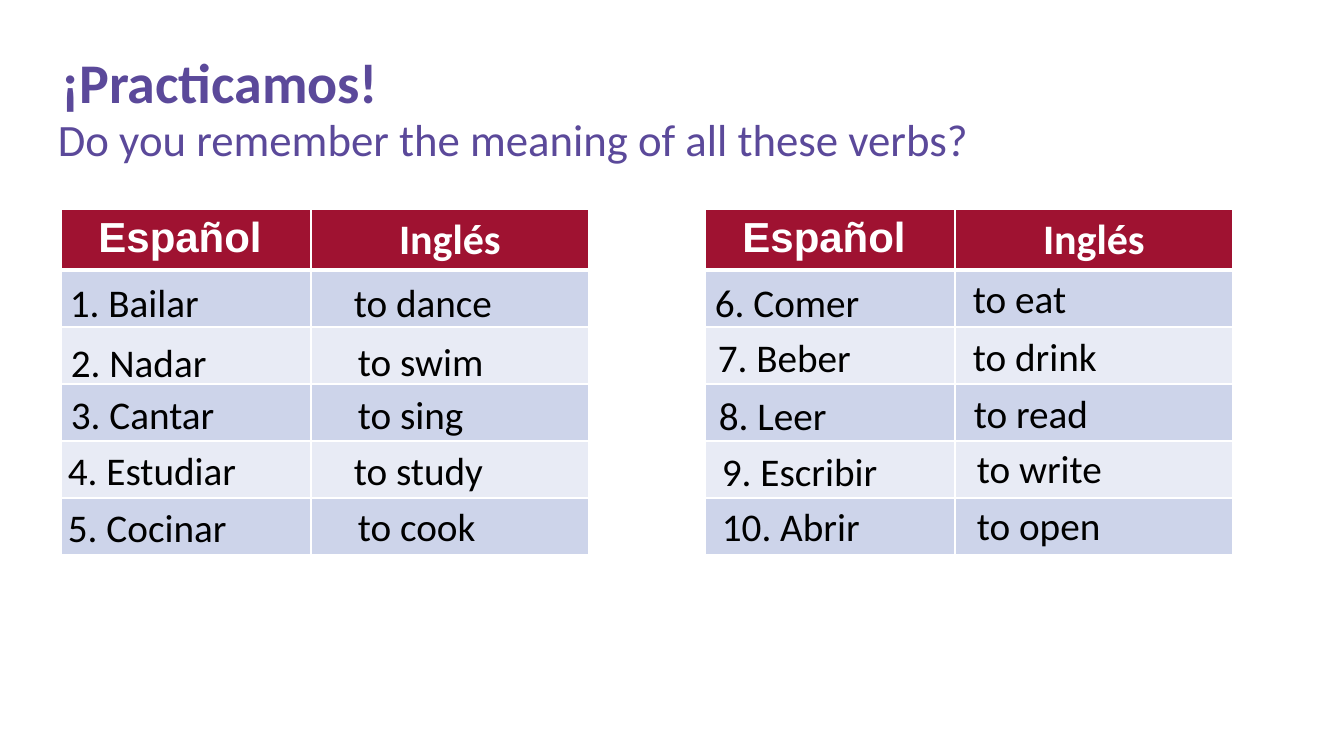
from dataclasses import dataclass
from lxml import etree
from pptx import Presentation
from pptx import util as u
from pptx.dml.color import RGBColor
from pptx.enum import text
from pptx.oxml import ns

PX_PER_INCH = 100.8


@dataclass(frozen=True)
class Theme:
    purple: str = "5B499A"
    red: str = "9F1231"
    white: str = "FFFFFF"
    black: str = "000000"
    bands: tuple = ("CDD4EA", "E8EBF5")
    font: str = "Calibri"
    spanish_header_font: str = "Arial"
    title_size: int = 40
    question_size: int = 32
    header_size: int = 30
    verb_size: int = 28


THEME = Theme()
COLUMN_WIDTHS = (250, 278)
HEADER_HEIGHT, ROW_HEIGHT = 61, 57
HEADERS = (("Español ", THEME.spanish_header_font), ("Inglés", THEME.font))

# Each entry: wording, horizontal and vertical nudge inside its cell, width.
FIRST_VERBS = (
    (("1. Bailar", -1, 3, 214), ("to dance", 33, 3, 334)),
    (("2. Nadar", 0, 6, 267), ("to swim", 37, 5, 267)),
    (("3. Cantar", 0, 1, 290), ("to sing", 37, 1, 267)),
    (("4. Estudiar", -3, 0, 274), ("to study", 33, 0, 274)),
    (("5. Cocinar", -3, 0, 267), ("to cook", 37, -1, 267)),
)
LAST_VERBS = (
    (("6. Comer", 0, 3, 267), ("to eat", 8, -1, 311)),
    (("7. Beber", 3, 1, 267), ("to drink", 8, 0, 267)),
    (("8. Leer", 4, 2, 267), ("to read", 9, 0, 267)),
    (("9. Escribir", 7, 1, 267), ("to write", 12, -2, 267)),
    (("10. Abrir", 7, -1, 267), ("to open", 12, -2, 334)),
)


def px(length):
    return u.Emu(round(length * u.Inches(1) / PX_PER_INCH))


def write(frame, wording, size, color, font=THEME.font, bold=False,
          align=text.PP_ALIGN.LEFT):
    frame.word_wrap = True
    paragraph = frame.paragraphs[0]
    paragraph.text = wording
    paragraph.alignment = align
    paragraph.font.name = font
    paragraph.font.size = u.Pt(size)
    paragraph.font.bold = bold
    paragraph.font.color.rgb = RGBColor.from_string(color)


def add_label(slide, left, top, width, height, wording, size, color):
    label = slide.shapes.add_textbox(px(left), px(top), px(width), px(height))
    write(label.text_frame, wording, size, color)


def style_cell(cell, color, bottom_width=1):
    properties = cell._tc.get_or_add_tcPr()
    for side, width in (("L", 1), ("R", 1), ("T", 1), ("B", bottom_width)):
        line = etree.SubElement(properties, ns.qn(f"a:ln{side}"), w=str(u.Pt(width)))
        fill = etree.SubElement(line, ns.qn("a:solidFill"))
        etree.SubElement(fill, ns.qn("a:srgbClr"), val=THEME.white)
    cell.fill.solid()
    cell.fill.fore_color.rgb = RGBColor.from_string(color)


def add_heading(slide, left, top):
    title = slide.shapes.title
    title.left, title.top = px(left + 3), px(top)
    title.width, title.height = px(1159), px(68)
    title.text_frame.vertical_anchor = text.MSO_ANCHOR.TOP
    title.text_frame.auto_size = text.MSO_AUTO_SIZE.NONE
    write(title.text_frame, "¡Practicamos!", THEME.title_size, THEME.purple, bold=True)
    add_label(slide, left, top + 65, 1311, 124,
              "Do you remember the meaning of all these verbs?",
              THEME.question_size, THEME.purple)


def add_verb_table(slide, left, top, verbs):
    height = HEADER_HEIGHT + ROW_HEIGHT * len(verbs)
    table = slide.shapes.add_table(
        len(verbs) + 1, len(HEADERS), px(left), px(top),
        px(sum(COLUMN_WIDTHS)), px(height)).table
    for column, width in zip(table.columns, COLUMN_WIDTHS):
        column.width = px(width)
    for row_index, row in enumerate(table.rows):
        row.height = px(ROW_HEIGHT if row_index else HEADER_HEIGHT)

    for column_index, (header, font) in enumerate(HEADERS):
        cell = table.cell(0, column_index)
        style_cell(cell, THEME.red, bottom_width=3)
        cell.margin_left = cell.margin_right = px(8)
        write(cell.text_frame, header, THEME.header_size, THEME.white, font,
              bold=True, align=text.PP_ALIGN.CENTER)

    for row_index, pair in enumerate(verbs):
        row_top = top + HEADER_HEIGHT + ROW_HEIGHT * row_index
        for column_index, (wording, dx, dy, width) in enumerate(pair):
            style_cell(table.cell(row_index + 1, column_index),
                       THEME.bands[row_index % 2])
            cell_left = left + sum(COLUMN_WIDTHS[:column_index])
            add_label(slide, cell_left + dx, row_top + dy, width, ROW_HEIGHT,
                      wording, THEME.verb_size, THEME.black)


def main():
    deck = Presentation()
    deck.slide_width, deck.slide_height = px(1344), px(756)
    slide = deck.slides.add_slide(deck.slide_layouts[5])
    add_heading(slide, 48, 42)
    add_verb_table(slide, 61, 209, FIRST_VERBS)
    add_verb_table(slide, 705, 209, LAST_VERBS)
    deck.save("out.pptx")


if __name__ == "__main__":
    main()
